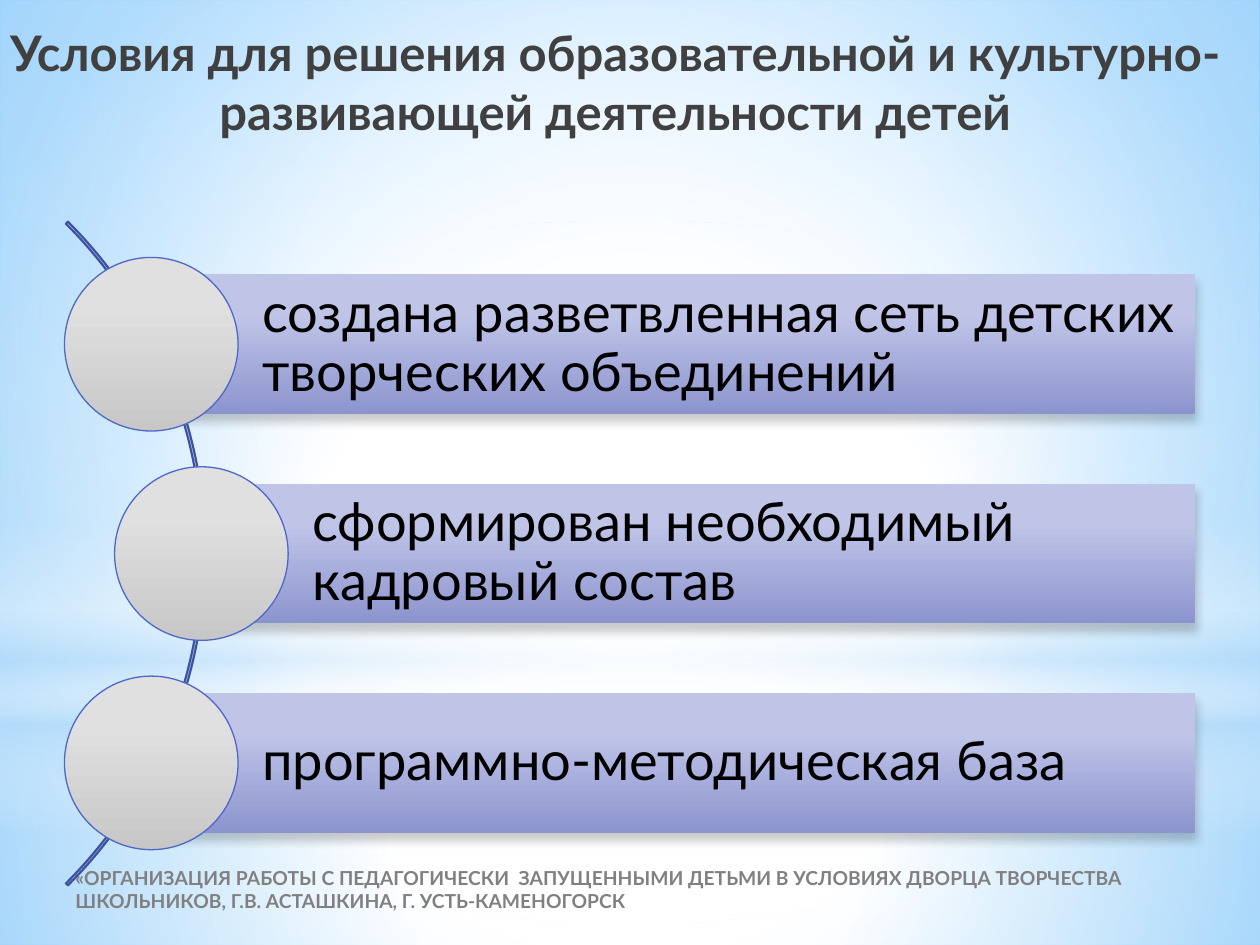
from lxml.etree import SubElement
from pptx import Presentation
from pptx.dml.color import RGBColor
from pptx.enum.shapes import MSO_SHAPE as Shape
from pptx.enum.text import MSO_ANCHOR as Anchor, PP_ALIGN as Align
from pptx.oxml.ns import qn
from pptx.util import Cm, Pt

TITLE = "Условия для решения образовательной и культурно-развивающей деятельности детей"
CONDITIONS = [
    "создана разветвленная сеть детских творческих объединений",
    "сформирован необходимый кадровый состав",
    "программно-методическая база",
]
FOOTER = (
    "«ОРГАНИЗАЦИЯ РАБОТЫ С ПЕДАГОГИЧЕСКИ  ЗАПУЩЕННЫМИ ДЕТЬМИ В УСЛОВИЯХ "
    "ДВОРЦА ТВОРЧЕСТВА ШКОЛЬНИКОВ, Г.В. АСТАШКИНА, Г. УСТЬ-КАМЕНОГОРСК"
)

CENTER = (50, 50, 50, 50)
SKY = [(0, "FFFFFF", 100), (42, "FFFFFF", 100), (100, "63BCFF", 100)]
SKY_FOCUS = (24, 44, 24, 12)
GLOWS = [
    (Shape.RECTANGLE, (0, 14.17, 25.4, 4.88), CENTER,
     [(0, "FFFFFF", 91), (37, "FFFFFF", 76), (100, "B4DCFA", 79)]),
    (Shape.RECTANGLE, (0, 0, 25.4, 14.17), CENTER,
     [(0, "FFFFFF", 89), (48, "FFFFFF", 62), (100, "B4DCFA", 79)]),
    (Shape.RECTANGLE, (0, 10.46, 25.4, 6.35), None,
     [(0, "FFFFFF", 0), (29, "FFFFFF", 30), (45, "B4DCFA", 40),
      (55, "FFFFFF", 26), (65, "B4DCFA", 60), (100, "FFFFFF", 0)]),
    (Shape.OVAL, (0, 4.45, 25.4, 14.17), CENTER,
     [(0, "FFFFFF", 100), (56, "FFFFFF", 0)]),
]
BAR_STOPS = [(28, "C0C5E8", 100), (100, "8C94CE", 100)]
CIRCLE_STOPS = [(28, "E0E0E0", 100), (100, "C7C7C7", 100)]

FIRST_MIDDLE, PITCH = 6.94, 4.22
BAR_HEIGHT, BAR_RIGHT = 2.82, 24.1
CIRCLE_SIZE = 3.5
OUTER_CENTER, INNER_CENTER = 3.05, 4.06


def color(value):
    return RGBColor.from_string(value)


def add_color(parent, value, alpha):
    tint = SubElement(parent, qn("a:srgbClr"), val=value)
    if alpha < 100:
        SubElement(tint, qn("a:alpha"), val=str(alpha * 1000))


def set_gradient(fill, element, stops, focus=None):
    fill.gradient()
    gradient = element.xpath(".//a:gradFill")[0]
    for child in list(gradient):
        gradient.remove(child)
    stop_list = SubElement(gradient, qn("a:gsLst"))
    for position, value, alpha in stops:
        stop = SubElement(stop_list, qn("a:gs"), pos=str(position * 1000))
        add_color(stop, value, alpha)
    if focus:
        route = SubElement(gradient, qn("a:path"), path="circle")
        sides = {side: str(part * 1000) for side, part in zip("ltrb", focus)}
        SubElement(route, qn("a:fillToRect"), **sides)
    else:
        SubElement(gradient, qn("a:lin"), ang="5400000", scaled="0")


def add_figure(page, kind, place, stops=None, focus=None, line=None, width=0.75):
    figure = page.shapes.add_shape(kind, *map(Cm, place))
    figure.shadow.inherit = False
    if stops:
        set_gradient(figure.fill, figure.element, stops, focus)
    else:
        figure.fill.background()
    if line:
        figure.line.color.rgb = color(line)
        figure.line.width = Pt(width)
    else:
        figure.line.fill.background()
    return figure


def add_shadow(figure):
    effects = figure.element.xpath("./p:spPr/a:effectLst")[0]
    shadow = SubElement(effects, qn("a:outerShdw"), blurRad=str(Pt(5)),
                        dist=str(Pt(4)), dir="5400000", rotWithShape="0")
    add_color(shadow, "000000", 20)


def write(box, text, size, ink, bold=False, align=Align.LEFT,
          anchor=Anchor.MIDDLE, spacing=1.0, left=0.25):
    frame = box.text_frame
    frame.word_wrap = True
    frame.vertical_anchor = anchor
    frame.margin_left = Cm(left)
    para = frame.paragraphs[0]
    para.alignment = align
    para.line_spacing = spacing
    span = para.add_run()
    span.text = text
    span.font.name = "Lato"
    span.font.size = Pt(size)
    span.font.bold = bold
    span.font.color.rgb = color(ink)


def add_text(page, place, text, **style):
    write(page.shapes.add_textbox(*map(Cm, place)), text, **style)


def add_condition(page, index, text):
    middle = FIRST_MIDDLE + index * PITCH
    center = INNER_CENTER if index % 2 else OUTER_CENTER
    bar = add_figure(
        page, Shape.RECTANGLE,
        (center, middle - BAR_HEIGHT / 2, BAR_RIGHT - center, BAR_HEIGHT), BAR_STOPS)
    add_shadow(bar)
    write(bar, text, size=31, ink="000000", spacing=0.9, left=2.24)
    radius = CIRCLE_SIZE / 2
    add_figure(
        page, Shape.OVAL,
        (center - radius, middle - radius, CIRCLE_SIZE, CIRCLE_SIZE),
        CIRCLE_STOPS, line="4E67C8")


def main():
    deck = Presentation()
    deck.slide_width, deck.slide_height = Cm(25.4), Cm(19.05)
    page = deck.slides.add_slide(deck.slide_layouts[6])
    set_gradient(page.background.fill, page.element, SKY, SKY_FOCUS)
    for kind, place, focus, stops in GLOWS:
        add_figure(page, kind, place, stops, focus)
    add_text(page, (-0.1, 0.33, 25, 3.99), TITLE, size=28, ink="404040",
             bold=True, align=Align.CENTER, anchor=Anchor.TOP)
    arc = add_figure(page, Shape.BLOCK_ARC, (-14.78, 1.7, 18.92, 18.92),
                     line="3E52A0", width=1.25)
    for index, value in enumerate((189, 27, 0.003)):
        arc.adjustments[index] = value
    for index, text in enumerate(CONDITIONS):
        add_condition(page, index, text)
    add_text(page, (1.27, 17.15, 23.62, 1.57), FOOTER, size=11, ink="808080", bold=True)
    deck.save("out.pptx")


if __name__ == "__main__":
    main()
